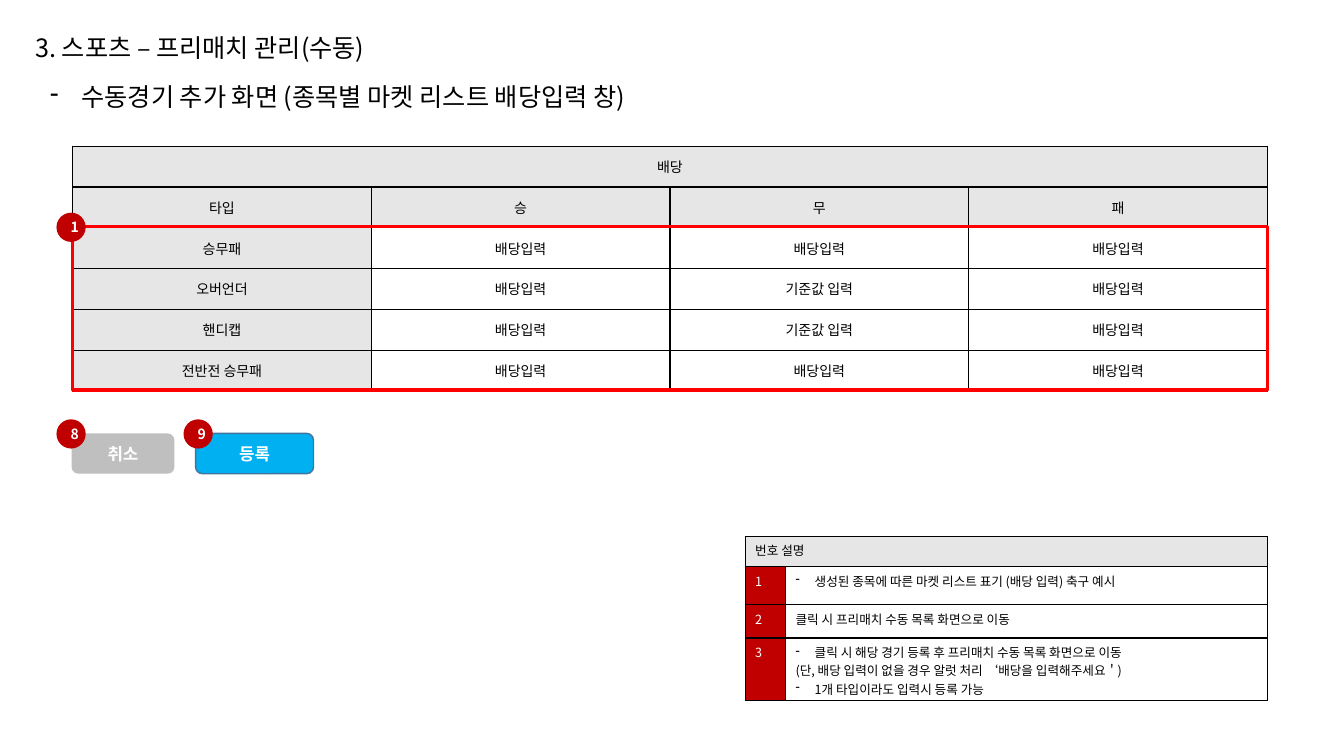
from dataclasses import dataclass

from lxml import etree
from pptx import Presentation
from pptx import util as u
from pptx.dml.color import RGBColor
from pptx.enum import shapes, text
from pptx.oxml import ns


@dataclass(frozen=True)
class Theme:
    font: str = "Noto Sans CJK KR"
    black: str = "000000"
    white: str = "FFFFFF"
    header: str = "E7E6E6"
    badge: str = "C00000"
    frame: str = "FF0000"
    cancel: str = "BFBFBF"
    register: str = "00B0F0"
    register_line: str = "43739E"
    heading: float = 18
    button: float = 12
    body: float = 10
    note: float = 9


@dataclass(frozen=True)
class Bullet:
    text: str
    indent: float


THEME = Theme()
CENTER = text.PP_ALIGN.CENTER
MIDDLE = text.MSO_ANCHOR.MIDDLE


def set_bullet(paragraph, indent):
    properties = paragraph._p.get_or_add_pPr()
    properties.set("marL", str(u.Inches(indent)))
    properties.set("indent", str(-u.Inches(indent)))
    etree.SubElement(properties, ns.qn("a:buChar"), char="-")


def write_text(frame, content, size, color=THEME.black, bold=False,
               align=text.PP_ALIGN.LEFT, anchor=text.MSO_ANCHOR.TOP):
    lines = content if isinstance(content, list) else [content]
    frame.vertical_anchor = anchor
    for index, line in enumerate(lines):
        paragraph = frame.add_paragraph() if index else frame.paragraphs[0]
        paragraph.alignment = align
        if isinstance(line, Bullet):
            set_bullet(paragraph, line.indent)
            line = line.text
        run = paragraph.add_run()
        run.text = line
        run.font.size = u.Pt(size)
        run.font.bold = bold
        run.font.color.rgb = RGBColor.from_string(color)
        run.font.name = THEME.font
        etree.SubElement(run._r.get_or_add_rPr(), ns.qn("a:ea"), typeface=THEME.font)


def set_borders(cell, color, width):
    properties = cell._tc.get_or_add_tcPr()
    for position, side in enumerate(("lnL", "lnR", "lnT", "lnB")):
        line = etree.Element(ns.qn(f"a:{side}"), w=str(u.Pt(width)))
        fill = etree.SubElement(line, ns.qn("a:solidFill"))
        etree.SubElement(fill, ns.qn("a:srgbClr"), val=color)
        properties.insert(position, line)


class SlideBuilder:
    def __init__(self, presentation, theme):
        self.theme = theme
        self.slide = presentation.slides.add_slide(presentation.slide_layouts[5])

    def place_heading(self, shape, box, content):
        shape.left, shape.top, shape.width, shape.height = map(u.Inches, box)
        frame = shape.text_frame
        frame.word_wrap = False
        frame.auto_size = text.MSO_AUTO_SIZE.SHAPE_TO_FIT_TEXT
        write_text(frame, content, self.theme.heading)

    def title(self, box, content):
        self.place_heading(self.slide.shapes.title, box, content)

    def subtitle(self, box, content):
        shape = self.slide.shapes.add_textbox(*map(u.Inches, box))
        self.place_heading(shape, box, content)

    def shape(self, kind, box, fill=None, line=None, width=1.0):
        shape = self.slide.shapes.add_shape(kind, *map(u.Inches, box))
        shape.shadow.inherit = False
        if fill:
            shape.fill.solid()
            shape.fill.fore_color.rgb = RGBColor.from_string(fill)
        else:
            shape.fill.background()
        if line:
            shape.line.color.rgb = RGBColor.from_string(line)
            shape.line.width = u.Pt(width)
        else:
            shape.line.fill.background()
        return shape

    def button(self, box, label, fill, line=None):
        shape = self.shape(shapes.MSO_SHAPE.ROUNDED_RECTANGLE, box, fill, line)
        write_text(shape.text_frame, label, self.theme.button, color=self.theme.white,
                   bold=True, align=CENTER, anchor=MIDDLE)

    def badge(self, left, top, number):
        shape = self.shape(shapes.MSO_SHAPE.OVAL, (left, top, 0.29, 0.29), self.theme.badge)
        write_text(shape.text_frame, number, self.theme.body, color=self.theme.white,
                   bold=True, align=CENTER, anchor=MIDDLE)

    def table(self, left, top, widths, heights, rows, size, cell_colors, **text_format):
        box = map(u.Inches, (left, top, sum(widths), sum(heights)))
        table = self.slide.shapes.add_table(len(heights), len(widths), *box).table
        table.horz_banding = False
        for column, width in zip(table.columns, widths):
            column.width = u.Inches(width)
        for row, height in zip(table.rows, heights):
            row.height = u.Inches(height)
        for row_index, row in enumerate(rows):
            for column_index in range(len(widths)):
                cell = table.cell(row_index, column_index)
                fill, color = cell_colors(row_index, column_index)
                cell.fill.solid()
                cell.fill.fore_color.rgb = RGBColor.from_string(fill)
                set_borders(cell, self.theme.black, 1)
                if column_index < len(row):
                    write_text(cell.text_frame, row[column_index], size, color=color, **text_format)
                    if "anchor" in text_format:
                        cell.vertical_anchor = text_format["anchor"]
        table.cell(0, 0).merge(table.cell(0, len(widths) - 1))


def odds_colors(row, column):
    return (THEME.header if row < 2 or column == 0 else THEME.white), THEME.black


def note_colors(row, column):
    if row == 0:
        return THEME.header, THEME.black
    return (THEME.badge, THEME.white) if column == 0 else (THEME.white, THEME.black)


def main():
    presentation = Presentation()
    presentation.slide_width = u.Inches(13.33)
    presentation.slide_height = u.Inches(7.5)
    builder = SlideBuilder(presentation, THEME)

    builder.title((0.25, 0.27, 3.82, 0.4), "3. 스포츠 – 프리매치 관리(수동)")
    builder.subtitle((0.4, 0.76, 6.6, 0.4),
                     Bullet("수동경기 추가 화면 (종목별 마켓 리스트 배당입력 창)", 0.31))

    odds, line_value = "배당입력", "기준값 입력"
    markets = [("승무패", odds), ("오버언더", line_value),
               ("핸디캡", line_value), ("전반전 승무패", odds)]
    odds_rows = [["배당"], ["타입", "승", "무", "패"]]
    odds_rows += [[market, odds, middle, odds] for market, middle in markets]
    builder.table(0.72, 1.45, [2.9625] * 4, [0.405] * 6, odds_rows, THEME.body,
                  odds_colors, align=CENTER, anchor=MIDDLE)

    notes = [
        ["번호 설명"],
        ["1", Bullet("생성된 종목에 따른 마켓 리스트 표기 (배당 입력) 축구 예시", 0.19)],
        ["2", "클릭 시 프리매치 수동 목록 화면으로 이동"],
        ["3", [Bullet("클릭 시 해당 경기 등록 후 프리매치 수동 목록 화면으로 이동", 0.19),
               "(단, 배당 입력이 없을 경우 알럿 처리 ‘배당을 입력해주세요＇)",
               Bullet("1개 타입이라도 입력시 등록 가능", 0.19)]],
    ]
    builder.table(7.39, 5.32, [0.4, 4.78], [0.3, 0.38, 0.33, 0.62], notes, THEME.note, note_colors)

    builder.button((1.94, 4.3, 1.17, 0.4), "등록", THEME.register, THEME.register_line)
    builder.button((0.71, 4.3, 1.02, 0.4), "취소", THEME.cancel)
    builder.shape(shapes.MSO_SHAPE.RECTANGLE, (0.72, 2.25, 11.85, 1.62),
                  line=THEME.frame, width=2.25)
    for left, top, number in ((0.56, 4.16, "8"), (1.82, 4.16, "9"), (0.56, 2.11, "1")):
        builder.badge(left, top, number)

    presentation.save("out.pptx")


if __name__ == "__main__":
    main()
